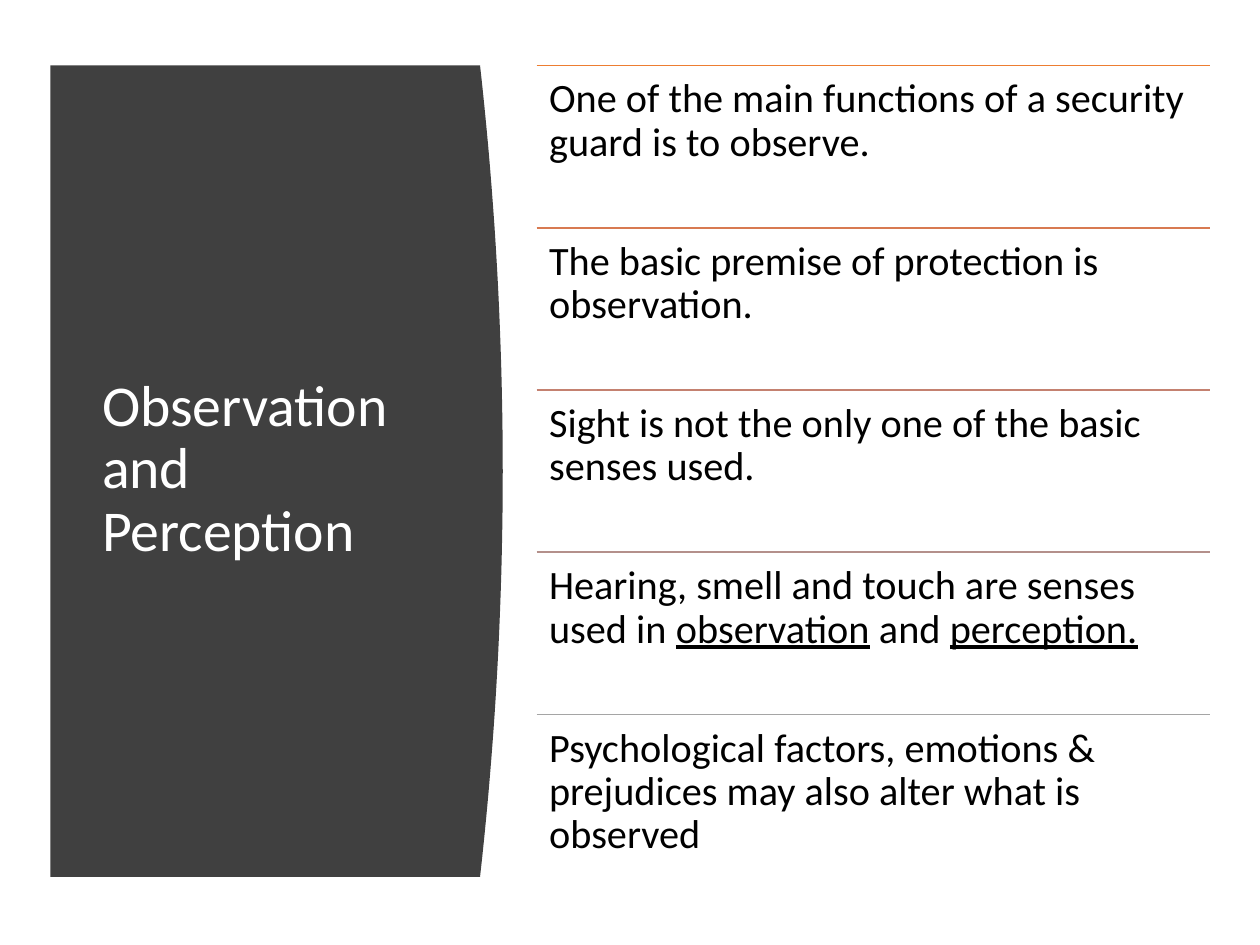
from lxml.etree import SubElement
from pptx import Presentation
from pptx.dml.color import RGBColor
from pptx.enum.shapes import MSO_CONNECTOR
from pptx.enum.text import MSO_ANCHOR, MSO_AUTO_SIZE, PP_ALIGN
from pptx.oxml.ns import qn
from pptx.util import Inches, Pt

TITLE = "Observation and Perception"
POINTS = [
    ("ED7D31", [("One of the main functions of a security \tguard is to observe.", False)]),
    ("D87A51", [("The basic premise of protection is observation.", False)]),
    ("C48170", [("Sight is not the only one of the basic senses used.", False)]),
    ("B4908B", [("Hearing, smell and touch are senses used in ", False),
                ("observation", True), (" and ", False), ("perception.", True)]),
    ("A5A5A5", [("Psychological factors, emotions & prejudices may also alter what is observed", False)]),
]
FONT = "Calibri"
TOP, BOTTOM = 0.52, 6.96
PANEL_LEFT, PANEL_EDGE, PANEL_BULGE = 0.4, 3.81, 0.18
CURVE_STEPS = 40
LIST_LEFT, LIST_WIDTH = 4.26, 5.34
ROW_HEIGHT = (BOTTOM - TOP) / len(POINTS)


def paint(color_format, hex_color):
    color_format.rgb = RGBColor.from_string(hex_color)


def add_run(paragraph, text, size, hex_color, underlined=False):
    run = paragraph.add_run()
    run.text = text
    run.font.name = FONT
    run.font.size = Pt(size)
    run.font.underline = underlined
    paint(run.font.color, hex_color)


def add_panel(slide):
    curve = []
    for step in range(CURVE_STEPS + 1):
        t = step / CURVE_STEPS
        x = PANEL_EDGE + PANEL_BULGE * (1 - (2 * t - 1) ** 2)
        curve.append((Inches(x), Inches(TOP + t * (BOTTOM - TOP))))
    builder = slide.shapes.build_freeform(Inches(PANEL_LEFT), Inches(TOP))
    builder.add_line_segments(curve + [(Inches(PANEL_LEFT), Inches(BOTTOM))], close=True)
    panel = builder.convert_to_shape()
    panel.shadow.inherit = False
    panel.fill.solid()
    paint(panel.fill.fore_color, "404040")
    panel.line.fill.background()


def add_title(slide):
    title = slide.shapes.title
    title.left, title.top = Inches(0.71), Inches(1.11)
    title.width, title.height = Inches(2.8), Inches(5.24)
    frame = title.text_frame
    frame.word_wrap = True
    frame.auto_size = MSO_AUTO_SIZE.NONE
    frame.vertical_anchor = MSO_ANCHOR.MIDDLE
    paragraph = frame.paragraphs[0]
    paragraph.alignment = PP_ALIGN.LEFT
    paragraph.line_spacing = 0.9
    add_run(paragraph, TITLE, 33, "FFFFFF")
    tree = slide.shapes._spTree
    tree.remove(title._element)
    tree.append(title._element)


def add_rule(slide, top, hex_color):
    rule = slide.shapes.add_connector(
        MSO_CONNECTOR.STRAIGHT, Inches(LIST_LEFT), Inches(top),
        Inches(LIST_LEFT + LIST_WIDTH), Inches(top))
    rule.line.width = Pt(1)
    paint(rule.line.color, hex_color)
    SubElement(rule._element.spPr, qn("a:effectLst"))


def add_point(slide, top, runs):
    point = slide.shapes.add_textbox(
        Inches(LIST_LEFT), Inches(top), Inches(LIST_WIDTH), Inches(ROW_HEIGHT))
    frame = point.text_frame
    frame.word_wrap = True
    frame.margin_left = frame.margin_right = Inches(0.1)
    frame.margin_top = frame.margin_bottom = Inches(0.1)
    paragraph = frame.paragraphs[0]
    paragraph.alignment = PP_ALIGN.LEFT
    paragraph.line_spacing = 0.9
    paragraph._p.get_or_add_pPr().set("defTabSz", str(Inches(1.12)))
    for text, underlined in runs:
        add_run(paragraph, text, 23, "000000", underlined)


def main():
    deck = Presentation()
    deck.slide_width, deck.slide_height = Inches(10), Inches(7.5)
    slide = deck.slides.add_slide(deck.slide_layouts[5])
    add_panel(slide)
    add_title(slide)
    for row, (rule_color, runs) in enumerate(POINTS):
        top = TOP + row * ROW_HEIGHT
        add_rule(slide, top, rule_color)
        add_point(slide, top, runs)
    deck.save("out.pptx")


if __name__ == "__main__":
    main()
